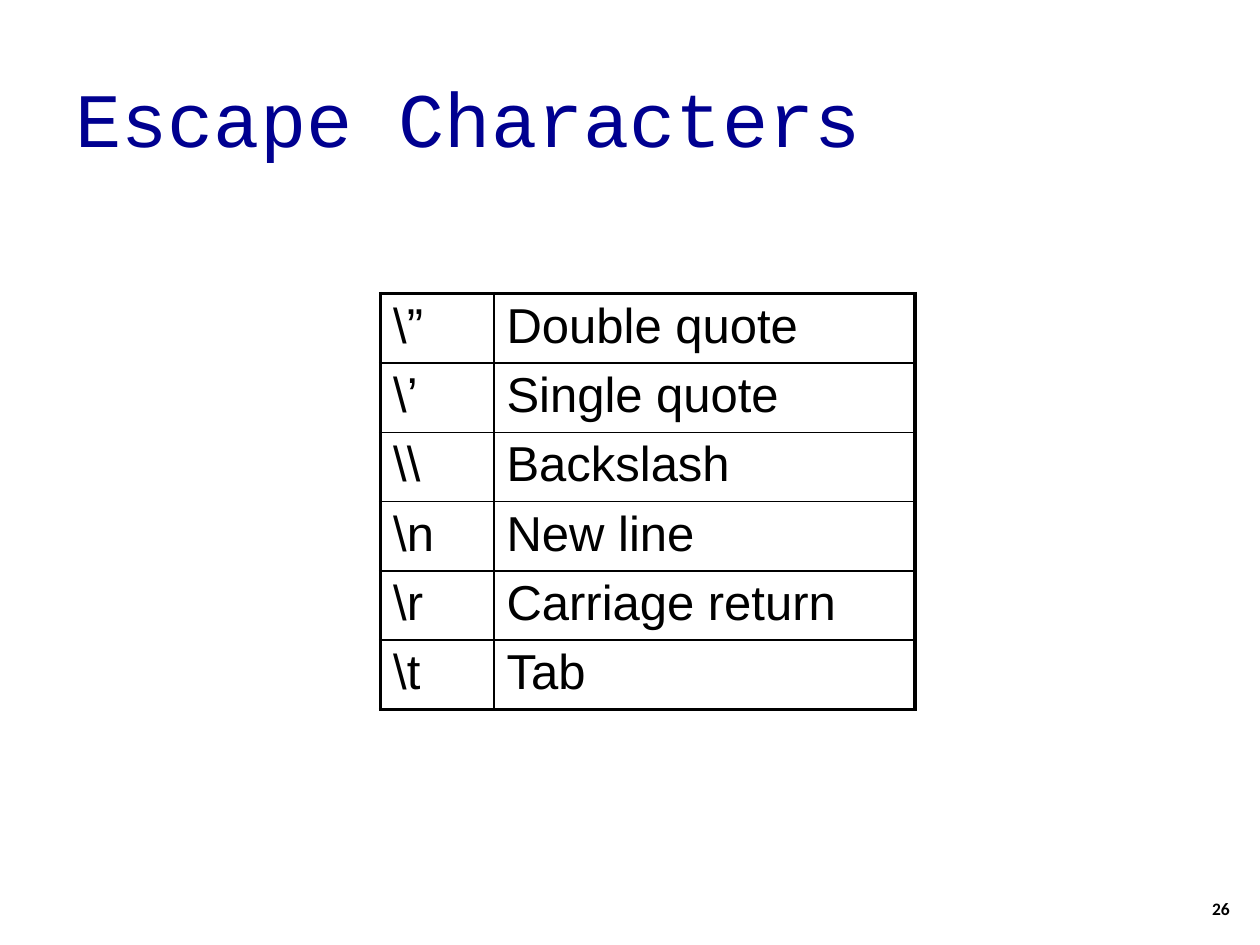
from lxml.etree import SubElement
from pptx import Presentation
from pptx.dml.color import RGBColor
from pptx.enum.text import MSO_ANCHOR as Anchor, PP_ALIGN as Align
from pptx.oxml.ns import qn
from pptx.util import Pt

ESCAPES = [
    ("\\”", "Double quote"),
    ("\\’", "Single quote"),
    ("\\\\", "Backslash"),
    ("\\n", "New line"),
    ("\\r", "Carriage return"),
    ("\\t", "Tab"),
]
COLUMN_WIDTHS = (64.8, 240.5)
ROW_HEIGHT = 38.4
OUTER, INNER = 2.25, 1


def style(para, font_name, size, color):
    para.font.name = font_name
    para.font.size = Pt(size)
    para.font.color.rgb = RGBColor.from_string(color)


def add_border(cell, side, width):
    """Draw one black cell border; side is L, R, T or B, in that order."""
    line = SubElement(cell._tc.get_or_add_tcPr(), qn(f"a:ln{side}"), w=str(Pt(width)))
    fill = SubElement(line, qn("a:solidFill"))
    SubElement(fill, qn("a:srgbClr"), val="000000")


deck = Presentation()
deck.slide_width, deck.slide_height = Pt(720), Pt(540)
slide = deck.slides.add_slide(deck.slide_layouts[6])

# Title and page number
texts = [
    ("Escape Characters", (36, 21.6, 648, 90), "Courier New", 44, "000090", Align.LEFT, False),
    ("26", (681, 504.7, 28.8, 28.8), "Calibri", 10, "000000", Align.RIGHT, True),
]
for text, place, font_name, size, color, align, bold in texts:
    box = slide.shapes.add_textbox(*map(Pt, place))
    frame = box.text_frame
    frame.word_wrap = True
    frame.vertical_anchor = Anchor.MIDDLE
    para = frame.paragraphs[0]
    para.text = text
    para.alignment = align
    para.font.bold = bold
    style(para, font_name, size, color)

# Table of escape sequences
last_row, last_column = len(ESCAPES) - 1, len(COLUMN_WIDTHS) - 1
table = slide.shapes.add_table(
    len(ESCAPES), len(COLUMN_WIDTHS), Pt(217.5), Pt(167.8),
    Pt(sum(COLUMN_WIDTHS)), Pt(ROW_HEIGHT * len(ESCAPES)),
).table
table.first_row = table.horz_banding = False
for column, width in zip(table.columns, COLUMN_WIDTHS):
    column.width = Pt(width)

for row, values in enumerate(ESCAPES):
    table.rows[row].height = Pt(ROW_HEIGHT)
    for column, value in enumerate(values):
        cell = table.cell(row, column)
        cell.margin_top = cell.margin_bottom = Pt(3)
        para = cell.text_frame.paragraphs[0]
        para.text = value
        style(para, "Arial", 28, "000000")
        on_edge = {
            "L": column == 0,
            "R": column == last_column,
            "T": row == 0,
            "B": row == last_row,
        }
        for side, outer in on_edge.items():
            add_border(cell, side, OUTER if outer else INNER)
        cell.fill.background()

deck.save("out.pptx")
